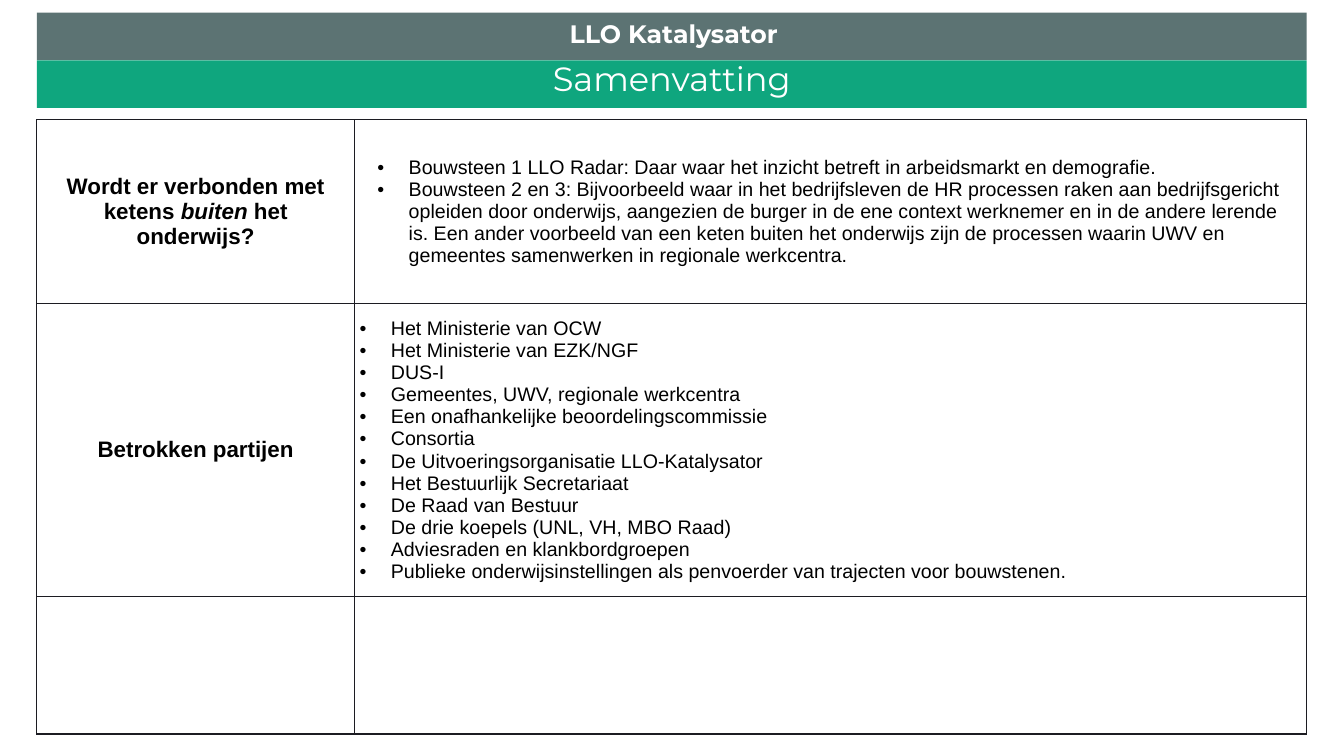
import pptx
import pptx.dml.color
import pptx.enum.shapes
import pptx.enum.text
import pptx.oxml.ns
import pptx.util
from lxml import etree

Cm = pptx.util.Cm
ALIGN = pptx.enum.text.PP_ALIGN
ANCHOR = pptx.enum.text.MSO_ANCHOR

WHITE, BLACK = "FFFFFF", "000000"
SLATE, GREEN, BORDER = "5C7373", "0FA67E", "1C1C22"
WIDE_INSET, NARROW_INSET = 0.25, 0.13
HANGING = 0.79

QUESTION = [("Wordt er verbonden met ketens ", False), ("buiten", True), (" het onderwijs?", False)]
CHAINS = [
    "Bouwsteen 1 LLO Radar: Daar waar het inzicht betreft in arbeidsmarkt en demografie.",
    "Bouwsteen 2 en 3: Bijvoorbeeld waar in het bedrijfsleven de HR processen raken aan "
    "bedrijfsgericht opleiden door onderwijs, aangezien de burger in de ene context werknemer "
    "en in de andere lerende is. Een ander voorbeeld van een keten buiten het onderwijs zijn de "
    "processen waarin UWV en gemeentes samenwerken in regionale werkcentra.",
]
PARTIES = [
    "Het Ministerie van OCW",
    "Het Ministerie van EZK/NGF",
    "DUS-I",
    "Gemeentes, UWV, regionale werkcentra",
    "Een onafhankelijke beoordelingscommissie",
    "Consortia",
    "De Uitvoeringsorganisatie LLO-Katalysator",
    "Het Bestuurlijk Secretariaat",
    "De Raad van Bestuur",
    "De drie koepels (UNL, VH, MBO Raad)",
    "Adviesraden en klankbordgroepen",
    "Publieke onderwijsinstellingen als penvoerder van trajecten voor bouwstenen.",
]


def rgb(value):
    return pptx.dml.color.RGBColor.from_string(value)


def add_child(parent, tag, **attributes):
    return etree.SubElement(parent, pptx.oxml.ns.qn(tag), **attributes)


def set_insets(target, inset):
    for side in ("left", "top", "right", "bottom"):
        setattr(target, f"margin_{side}", Cm(inset))


def add_bullet(paragraph, indent):
    properties = paragraph._p.get_or_add_pPr()
    properties.set("marL", str(Cm(indent)))
    properties.set("indent", str(-Cm(HANGING)))
    add_child(add_child(properties, "a:buClr"), "a:srgbClr", val=BLACK)
    add_child(properties, "a:buFont", typeface="Arial")
    add_child(properties, "a:buChar", char="•")


def write_text(frame, paragraphs, size, font="Arial", color=BLACK, bold=False,
               align=ALIGN.LEFT, bullet_indent=None):
    """Each paragraph is a string or a list of (text, italic) runs."""
    for index, content in enumerate(paragraphs):
        paragraph = frame.add_paragraph() if index else frame.paragraphs[0]
        paragraph.alignment = align
        if bullet_indent is not None:
            add_bullet(paragraph, bullet_indent)
        for text, italic in [(content, False)] if isinstance(content, str) else content:
            run = paragraph.add_run()
            run.text = text
            run.font.name, run.font.size = font, pptx.util.Pt(size)
            run.font.bold, run.font.italic = bold, italic
            run.font.color.rgb = rgb(color)


def add_band(slide, left, top, width, height, fill):
    band = slide.shapes.add_shape(pptx.enum.shapes.MSO_SHAPE.RECTANGLE,
                                  Cm(left), Cm(top), Cm(width), Cm(height))
    band.shadow.inherit = False
    band.fill.solid()
    band.fill.fore_color.rgb = rgb(fill)
    band.line.fill.background()
    return band


def write_band_text(shape, text, size, anchor, bold=False):
    frame = shape.text_frame
    frame.word_wrap = True
    frame.vertical_anchor = anchor
    set_insets(frame, WIDE_INSET)
    write_text(frame, [text], size, font="Montserrat", color=WHITE, bold=bold, align=ALIGN.CENTER)


def build_header(slide, left, top, width, height):
    band_height = height / 2
    add_band(slide, left, top, width, band_height, SLATE)
    title = add_band(slide, left, top + band_height, width, band_height, GREEN)
    write_band_text(title, "Samenvatting", 24, ANCHOR.BOTTOM)
    programme = slide.shapes.add_textbox(Cm(left + 0.43), Cm(top - 0.15),
                                         Cm(width - 0.76), Cm(band_height + 0.15))
    write_band_text(programme, "LLO Katalysator", 18, ANCHOR.MIDDLE, bold=True)


def style_cell(cell, inset):
    cell.vertical_anchor = ANCHOR.MIDDLE
    set_insets(cell, inset)
    properties = cell._tc.get_or_add_tcPr()
    for side in ("a:lnL", "a:lnR", "a:lnT", "a:lnB"):
        line = add_child(properties, side, w=str(pptx.util.Pt(1)))
        add_child(add_child(line, "a:solidFill"), "a:srgbClr", val=BORDER)
    cell.fill.background()


def build_summary(slide, left, top, width, height):
    row_shares = (0.309, 0.46, 0.231)
    rows = [(QUESTION, CHAINS, 1.24), ("Betrokken partijen", PARTIES, HANGING), (None, [], 0)]
    table = slide.shapes.add_table(len(rows), 2, Cm(left), Cm(top), Cm(width), Cm(height)).table
    table.first_row = table.horz_banding = False
    for column, share in zip(table.columns, (0.25, 0.75)):
        column.width = Cm(width * share)
    for row, share, (label, items, indent) in zip(table.rows, row_shares, rows):
        row.height = Cm(height * share)
        label_cell, items_cell = row.cells
        style_cell(label_cell, WIDE_INSET)
        style_cell(items_cell, NARROW_INSET)
        if label:
            write_text(label_cell.text_frame, [label], 16, bold=True, align=ALIGN.CENTER)
        write_text(items_cell.text_frame, items, 14, bullet_indent=indent)


def main():
    presentation = pptx.Presentation()
    presentation.slide_width, presentation.slide_height = Cm(33.87), Cm(19.05)
    slide = presentation.slides.add_slide(presentation.slide_layouts[6])
    build_header(slide, 0.93, 0.32, 32, 2.4)
    build_summary(slide, 0.93, 3.02, 32, 15)
    presentation.save("out.pptx")


if __name__ == "__main__":
    main()
